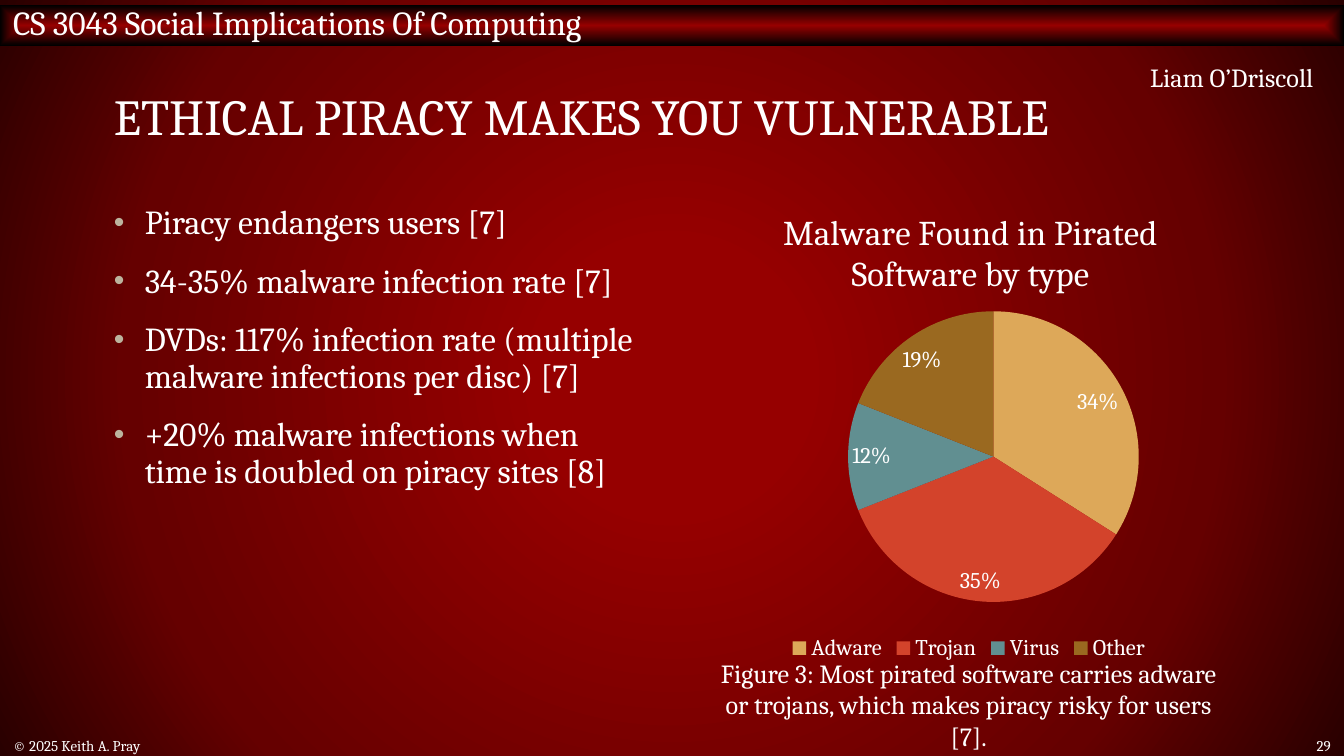
from dataclasses import dataclass

from lxml import etree
from pptx import Presentation
from pptx.chart.data import CategoryChartData
from pptx.dml.color import RGBColor
from pptx.enum.chart import XL_CHART_TYPE as ChartType
from pptx.enum.chart import XL_LABEL_POSITION as LabelPosition
from pptx.enum.chart import XL_LEGEND_POSITION as LegendPosition
from pptx.enum.shapes import MSO_SHAPE as ShapeType
from pptx.enum.text import MSO_ANCHOR as Anchor
from pptx.enum.text import PP_ALIGN as Align
from pptx.oxml import parse_xml
from pptx.oxml.ns import nsdecls, qn
from pptx.util import Pt


@dataclass(frozen=True)
class Theme:
    font: str = "Cambria"
    text: str = "FFFFFF"
    bullet: str = "BCB49E"
    slices: tuple = ("DDA859", "D3432B", "618F91", "9A6920")
    backdrop: tuple = ((17, "960000"), (71, "650000"), (100, "290000"))
    banner: tuple = ((0, "960000"), (100, "000000"))
    title: float = 27
    chart_title: float = 18.6
    body: float = 18
    caption: float = 14
    label: float = 12
    footer: float = 8


class SlideBuilder:
    def __init__(self, slide, theme):
        self.slide = slide
        self.theme = theme

    def style_font(self, font, size):
        font.name = self.theme.font
        font.size = Pt(size)
        font.bold = False
        font.color.rgb = RGBColor.from_string(self.theme.text)

    def center_gradient(self, fill, element, stops, shape):
        """Fill outwards from the middle, in the given path shape."""
        fill.gradient()
        old = next(element.iter(qn("a:gradFill")))
        stop_xml = "".join(
            f'<a:gs pos="{position * 1000}"><a:srgbClr val="{color}"/></a:gs>'
            for position, color in stops)
        new = parse_xml(
            f'<a:gradFill {nsdecls("a")} rotWithShape="1"><a:gsLst>{stop_xml}</a:gsLst>'
            f'<a:path path="{shape}"><a:fillToRect l="50000" t="50000" r="50000" b="50000"/>'
            '</a:path></a:gradFill>')
        old.getparent().replace(old, new)

    def background(self):
        self.center_gradient(self.slide.background.fill, self.slide.element,
                             self.theme.backdrop, "circle")

    def banner(self, text, left, top, width, height):
        shape = self.slide.shapes.add_shape(
            ShapeType.RECTANGLE, Pt(left), Pt(top), Pt(width), Pt(height))
        shape.shadow.inherit = False
        shape.line.fill.background()
        self.center_gradient(shape.fill, shape.element, self.theme.banner, "shape")
        frame = shape.text_frame
        frame.margin_top = 0
        frame.vertical_anchor = Anchor.MIDDLE
        frame.text = text
        frame.paragraphs[0].alignment = Align.LEFT
        self.style_font(frame.paragraphs[0].runs[0].font, self.theme.body)

    def text(self, text, left, top, width, height, size,
             align=Align.LEFT, anchor=Anchor.TOP, spacing=None):
        box = self.slide.shapes.add_textbox(Pt(left), Pt(top), Pt(width), Pt(height))
        frame = box.text_frame
        frame.word_wrap = True
        frame.vertical_anchor = anchor
        frame.text = text
        for paragraph in frame.paragraphs:
            paragraph.alignment = align
            paragraph.line_spacing = spacing
            for run in paragraph.runs:
                self.style_font(run.font, size)
        return frame

    def bullets(self, items, left, top, width, height):
        frame = self.text("\n".join(items), left, top, width, height,
                          self.theme.body, spacing=0.9)
        for index, paragraph in enumerate(frame.paragraphs):
            paragraph.space_before = Pt(12 if index else 0)
            properties = paragraph._p.get_or_add_pPr()
            properties.set("marL", str(Pt(16.5)))
            properties.set("indent", str(-Pt(16.5)))
            color = etree.SubElement(properties, qn("a:buClr"))
            etree.SubElement(color, qn("a:srgbClr"), val=self.theme.bullet)
            etree.SubElement(properties, qn("a:buSzPct"), val="90000")
            etree.SubElement(properties, qn("a:buFont"), typeface="Arial")
            etree.SubElement(properties, qn("a:buChar"), char="•")

    def place(self, parent, before, **fractions):
        """Give a chart part a fixed layout in fractions of the chart."""
        for old in parent.findall(qn("c:layout")):
            parent.remove(old)
        modes = "".join(f'<c:{axis}Mode val="edge"/>' for axis in "xy")
        target = '<c:layoutTarget val="inner"/>' if "w" in fractions else ""
        values = "".join(f'<c:{key} val="{value}"/>' for key, value in fractions.items())
        layout = parse_xml(f'<c:layout {nsdecls("c")}><c:manualLayout>{target}{modes}{values}'
                           '</c:manualLayout></c:layout>')
        parent.find(qn(before)).addprevious(layout)

    def pie(self, title, values, left, top, width, height):
        data = CategoryChartData(number_format="0%")
        data.categories = list(values)
        data.add_series("Series 1", list(values.values()))
        chart = self.slide.shapes.add_chart(
            ChartType.PIE, Pt(left), Pt(top), Pt(width), Pt(height), data).chart
        self.style_font(chart.font, self.theme.label)

        # Title
        chart.has_title = True
        frame = chart.chart_title.text_frame
        frame.text = title
        self.style_font(frame.paragraphs[0].runs[0].font, self.theme.chart_title)
        chart.chart_title.include_in_layout = False
        self.place(chart.chart_title._element, "c:overlay", x=0.15, y=0.06)

        # Legend
        chart.has_legend = True
        chart.legend.position = LegendPosition.BOTTOM
        chart.legend.include_in_layout = False
        self.style_font(chart.legend.font, self.theme.label)

        # Slices and labels
        plot = chart.plots[0]
        plot.vary_by_categories = True
        self.place(plot._element.getparent(), "c:pieChart", x=0.28, y=0.28, w=0.53, h=0.59)
        for index, color in enumerate(self.theme.slices):
            fill = plot.series[0].points[index].format.fill
            fill.solid()
            fill.fore_color.rgb = RGBColor.from_string(color)
        labels = plot.series[0].data_labels
        labels.show_value = True
        labels.show_percentage = False
        labels.number_format = "0%"
        labels.number_format_is_linked = False
        labels.position = LabelPosition.BEST_FIT
        self.style_font(labels.font, self.theme.label)


def main():
    presentation = Presentation()
    presentation.slide_width = Pt(720)
    presentation.slide_height = Pt(405)
    theme = Theme()
    builder = SlideBuilder(
        presentation.slides.add_slide(presentation.slide_layouts[6]), theme)

    # Backdrop and course banner
    builder.background()
    builder.banner("CS 3043 Social Implications Of Computing", 0, 2.9, 720, 21.6)

    # Title and bullets
    builder.text("ETHICAL PIRACY MAKES YOU VULNERABLE", 54, 28.8, 612, 72,
                 theme.title, anchor=Anchor.MIDDLE, spacing=0.8)
    builder.bullets(["Piracy endangers users [7]",
                     "34-35% malware infection rate [7]",
                     "DVDs: 117% infection rate (multiple malware infections per disc) [7]",
                     "+20% malware infections when time is doubled on piracy sites [8]"],
                    54, 106.5, 294, 264)

    # Footer and author
    builder.text("© 2025 Keith A. Pray", 0, 393.4, 438, 11.6,
                 theme.footer, anchor=Anchor.MIDDLE)
    builder.text("29", 671, 393.4, 49, 11.6, theme.footer, Align.RIGHT, Anchor.MIDDLE)
    builder.text("Liam O’Driscoll", 539.3, 29.5, 171.4, 24.5, theme.caption, Align.RIGHT)

    # Chart and caption
    builder.pie("Malware Found in Pirated Software by type",
                {"Adware": 0.34, "Trojan": 0.35, "Virus": 0.12, "Other": 0.19},
                372, 92.9, 294, 264)
    builder.text("Figure 3: Most pirated software carries adware or trojans, "
                 "which makes piracy risky for users [7].",
                 372, 348.5, 294, 73.4, theme.caption, Align.CENTER)

    presentation.save("out.pptx")


if __name__ == "__main__":
    main()
